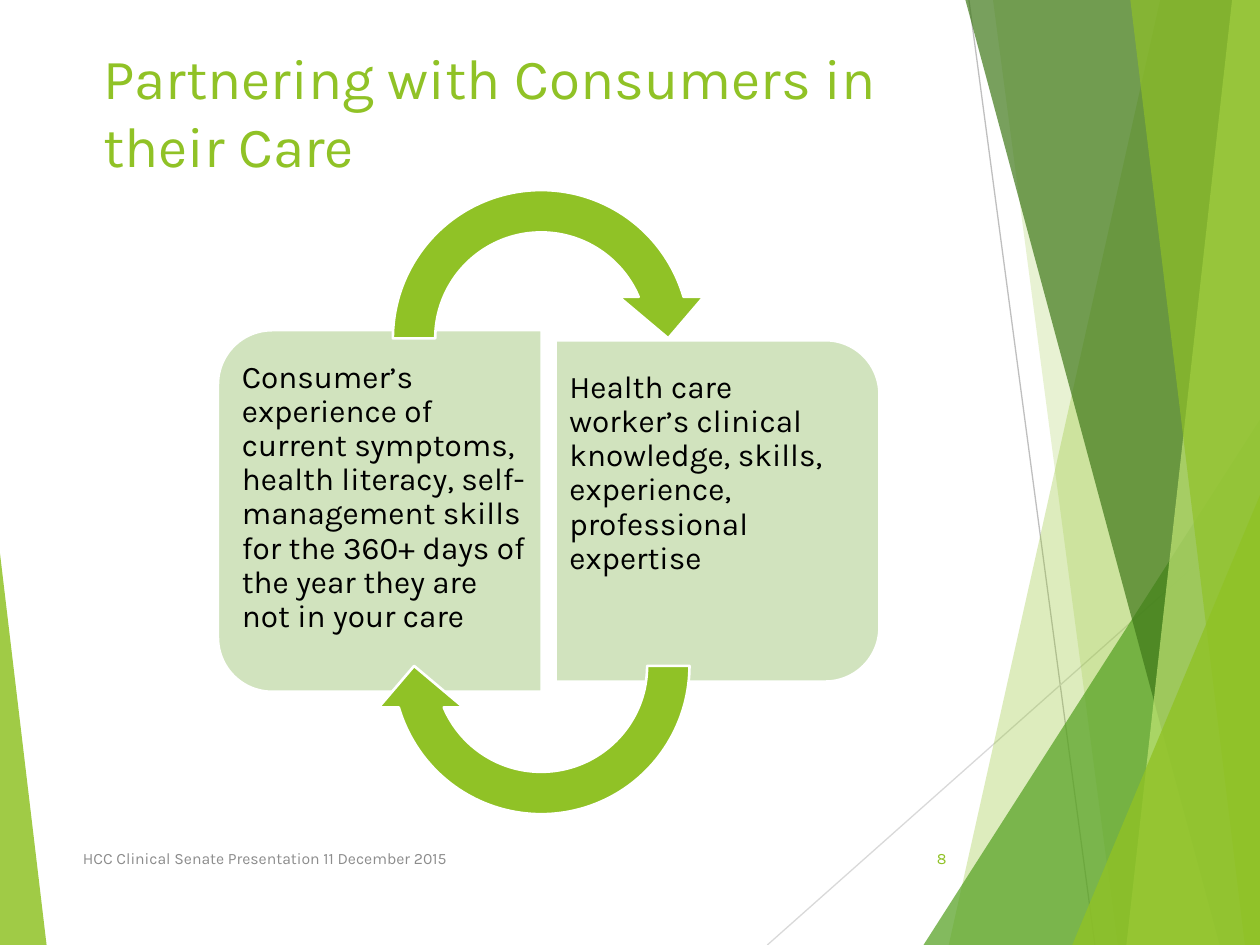
from dataclasses import dataclass
from typing import Optional

from lxml.etree import SubElement
from pptx import Presentation
from pptx.dml.color import RGBColor
from pptx.enum.shapes import MSO_CONNECTOR, MSO_SHAPE
from pptx.enum.text import MSO_ANCHOR, PP_ALIGN
from pptx.oxml.ns import qn
from pptx.util import Inches, Pt

LIME = RGBColor(0x90, 0xC2, 0x26)
LEAF = RGBColor(0x54, 0xA0, 0x21)
FOREST = RGBColor(0x3F, 0x78, 0x19)
PALE_LIME = RGBColor(0xC0, 0xE4, 0x74)
PANEL_GREEN = RGBColor(0xD1, 0xE3, 0xBE)
SILVER = RGBColor(0xBF, 0xBF, 0xBF)
LIGHT_GRAY = RGBColor(0xD9, 0xD9, 0xD9)
FOOTER_GRAY = RGBColor(0x8C, 0x8C, 0x8C)
WHITE = RGBColor(0xFF, 0xFF, 0xFF)
BLACK = RGBColor(0, 0, 0)
FONT = "Karla"
WIDTH, HEIGHT = 10, 7.5
BAND_TOP = -0.01
ARROW_ADJUSTMENTS = (0.125, 11.423, 204.577, 108, 0.125)
PANEL_ADJUSTMENTS = (0.167, 0)


@dataclass
class Ray:
    start: tuple
    end: tuple
    color: RGBColor


@dataclass
class Band:
    top_left: float
    bottom_left: float
    color: RGBColor
    opacity: int


@dataclass
class Wedge:
    box: tuple
    apex: float
    color: RGBColor
    opacity: int


@dataclass
class Outlined:
    kind: MSO_SHAPE
    box: tuple
    rotation: int
    adjustments: tuple
    color: RGBColor


@dataclass
class Label:
    text: str
    box: tuple
    size: float
    color: RGBColor
    insets: tuple = (0.1, 0.05, 0.1, 0.05)
    anchor: MSO_ANCHOR = MSO_ANCHOR.TOP
    align: PP_ALIGN = PP_ALIGN.LEFT
    spacing: Optional[float] = None


RAYS = [
    Ray((7.69, 0), (8.69, HEIGHT), SILVER),
    Ray((WIDTH, 4.03), (6.09, HEIGHT), LIGHT_GRAY),
]
DECORATION = [
    Band(9.21, 7.53, LIME, 30),
    Band(7.88, 8.87, LIME, 20),
    Wedge((7.33, 3.33, 2.67, 4.17), 1, LEAF, 72),
    Band(7.66, 9.68, FOREST, 70),
    Band(9.78, 8.94, PALE_LIME, 70),
    Band(8.97, 9.88, LIME, 65),
    Wedge((8.51, 3.93, 1.49, 3.57), 1, LIME, 80),
    Wedge((0, 4.39, 0.37, 3.11), 0, LIME, 85),
]
PANELS = [
    Outlined(MSO_SHAPE.ROUND_2_SAME_RECTANGLE, (1.58, 2.77, 2.87, 2.57), 270,
             PANEL_ADJUSTMENTS, PANEL_GREEN),
    Outlined(MSO_SHAPE.ROUND_2_SAME_RECTANGLE, (4.34, 2.77, 2.71, 2.57), 90,
             PANEL_ADJUSTMENTS, PANEL_GREEN),
]
ARROWS = [
    Outlined(MSO_SHAPE.CIRCULAR_ARROW, (2.95, top, 2.69, 2.69), rotation,
             ARROW_ADJUSTMENTS, LIME)
    for top, rotation in ((1.34, 0), (3.94, 180))
]
LABELS = [
    Label("Partnering with Consumers in their Care", (0.72, 0.29, 6.78, 1), 32.4, LIME),
    Label("HCC Clinical Senate Presentation 11 December 2015",
          (0.56, 6.61, 5.17, 0.4), 9, FOOTER_GRAY, anchor=MSO_ANCHOR.MIDDLE),
    Label("8", (7.05, 6.61, 0.56, 0.4), 9, LIME,
          anchor=MSO_ANCHOR.MIDDLE, align=PP_ALIGN.RIGHT),
    Label("Consumer’s experience of current symptoms, health literacy, "
          "self-management skills for the 360+ days of the year they are "
          "not in your care",
          (1.85, 2.75, 2.44, 2.62), 18, BLACK, (0.07, 0.12, 0.11, 0.12), spacing=0.9),
    Label("Health care worker’s clinical knowledge, skills, experience, "
          "professional expertise",
          (4.41, 2.83, 2.44, 2.46), 18, BLACK, (0.11, 0.12, 0.07, 0.12), spacing=0.9),
]


def apply_format(target, values: dict) -> None:
    for name, value in values.items():
        setattr(target, name, value)


def lengths(values: tuple) -> list:
    return [Inches(value) for value in values]


def fill_shape(shape, color: RGBColor, opacity: int = 100) -> None:
    shape.shadow.inherit = False
    shape.fill.solid()
    shape.fill.fore_color.rgb = color
    if opacity < 100:
        color_element = shape.fill._xPr.find(qn("a:solidFill"))[0]
        SubElement(color_element, qn("a:alpha"), val=str(opacity * 1000))


def draw_ray(slide, ray: Ray) -> None:
    connector = slide.shapes.add_connector(
        MSO_CONNECTOR.STRAIGHT, *lengths(ray.start + ray.end))
    connector.line.color.rgb = ray.color
    connector.line.width = Pt(0.75)
    SubElement(connector._element.spPr, qn("a:effectLst"))


def draw_band(slide, band: Band) -> None:
    corners = [(WIDTH, BAND_TOP), (WIDTH, HEIGHT), (band.bottom_left, HEIGHT)]
    builder = slide.shapes.build_freeform(*lengths((band.top_left, BAND_TOP)))
    builder.add_line_segments([lengths(corner) for corner in corners], close=True)
    shape = builder.convert_to_shape()
    fill_shape(shape, band.color, band.opacity)
    shape.line.fill.background()


def draw_wedge(slide, wedge: Wedge) -> None:
    shape = slide.shapes.add_shape(MSO_SHAPE.ISOSCELES_TRIANGLE, *lengths(wedge.box))
    shape.adjustments[0] = wedge.apex
    fill_shape(shape, wedge.color, wedge.opacity)
    shape.line.fill.background()


def draw_outlined(slide, item: Outlined) -> None:
    shape = slide.shapes.add_shape(item.kind, *lengths(item.box))
    shape.rotation = item.rotation
    for index, value in enumerate(item.adjustments):
        shape.adjustments[index] = value
    fill_shape(shape, item.color)
    shape.line.color.rgb = WHITE
    shape.line.width = Pt(1.5)


def draw_label(slide, label: Label) -> None:
    frame = slide.shapes.add_textbox(*lengths(label.box)).text_frame
    sides = ("margin_left", "margin_top", "margin_right", "margin_bottom")
    apply_format(frame, dict(zip(sides, lengths(label.insets))))
    apply_format(frame, {"word_wrap": True, "vertical_anchor": label.anchor})
    paragraph = frame.paragraphs[0]
    apply_format(paragraph, {"alignment": label.align, "line_spacing": label.spacing})
    run = paragraph.add_run()
    run.text = label.text
    apply_format(run.font, {"name": FONT, "size": Pt(label.size)})
    run.font.color.rgb = label.color


def main() -> None:
    presentation = Presentation()
    apply_format(presentation, {"slide_width": Inches(WIDTH), "slide_height": Inches(HEIGHT)})
    slide = presentation.slides.add_slide(presentation.slide_layouts[6])
    painters = {Ray: draw_ray, Band: draw_band, Wedge: draw_wedge,
                Outlined: draw_outlined, Label: draw_label}
    for item in RAYS + DECORATION + PANELS + LABELS + ARROWS:
        painters[type(item)](slide, item)
    presentation.save("out.pptx")


if __name__ == "__main__":
    main()
